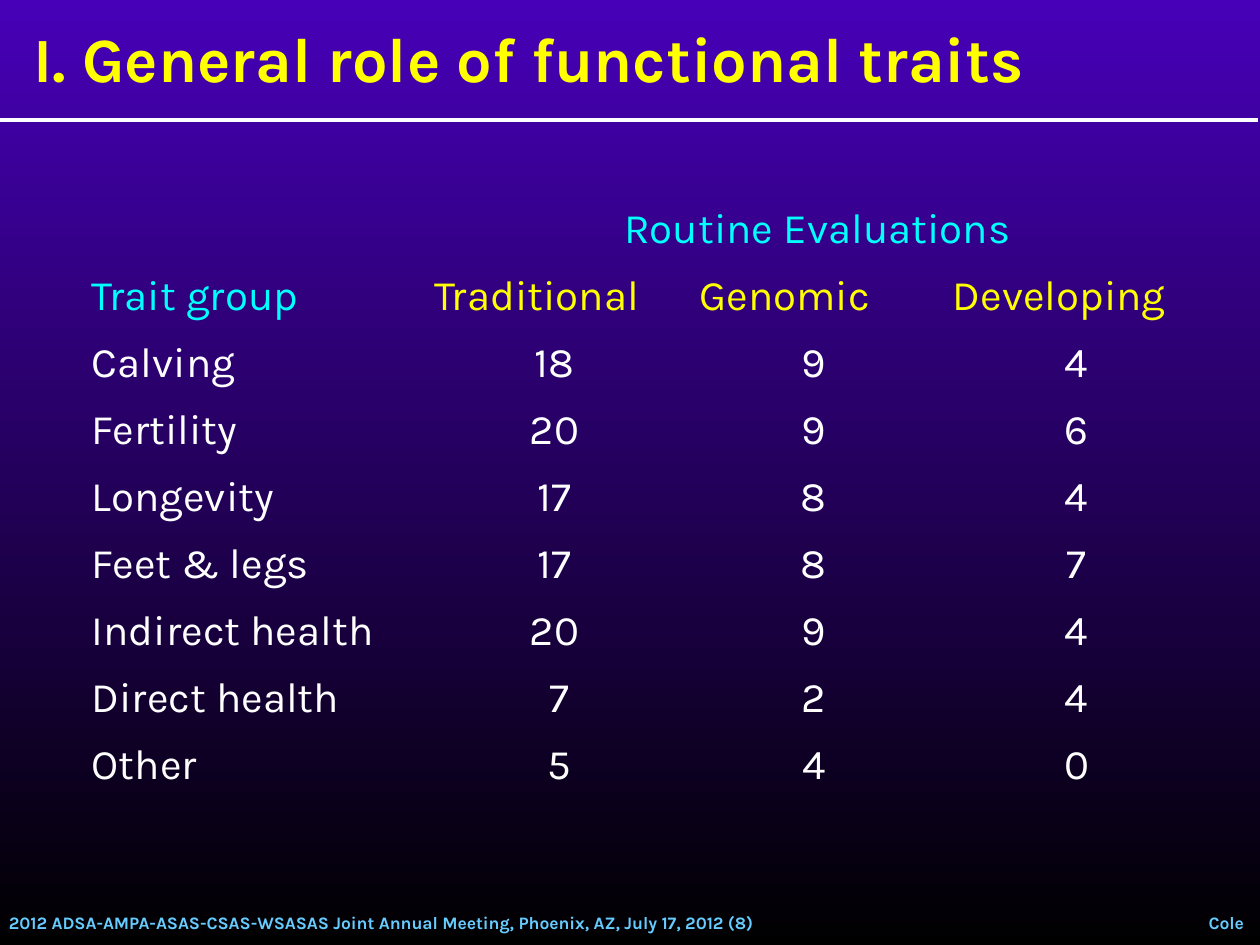
"""Build the slide on the general role of functional traits."""
from pptx import Presentation
from pptx.dml.color import RGBColor
from pptx.enum.shapes import MSO_CONNECTOR
from pptx.enum.text import MSO_ANCHOR, PP_ALIGN as Align
from pptx.oxml.ns import qn
from pptx.util import Cm, Pt
from lxml.etree import SubElement

FONT = "Karla"
VIOLET = RGBColor(0x47, 0x00, 0xB8)
BLACK = RGBColor(0x00, 0x00, 0x00)
WHITE = RGBColor(0xFF, 0xFF, 0xFF)
YELLOW = RGBColor(0xFF, 0xFF, 0x00)
CYAN = RGBColor(0x00, 0xFF, 0xFF)
SKY = RGBColor(0x66, 0xCC, 0xFF)

NO_GRID_STYLE = "{2D5ABB26-0587-4C30-8999-92F81FD0307C}"
COLUMN_WIDTHS = (6.9, 5.35, 5.11, 5.49)
ROW_HEIGHT = 1.35
HEADINGS = ("Trait group", "Traditional", "Genomic", "Developing")
TRAITS = (
    ("Calving", "18", "9", "4"),
    ("Fertility", "20", "9", "6"),
    ("Longevity", "17", "8", "4"),
    ("Feet & legs", "17", "8", "7"),
    ("Indirect health", "20", "9", "4"),
    ("Direct health", " 7", "2", "4"),
    ("Other", " 5", "4", "0"),
)


def set_values(target, values):
    for name, value in values.items():
        setattr(target, name, value)


def write_text(frame, text, size, color, bold=False, align=Align.LEFT):
    para = frame.paragraphs[0]
    para.alignment = align
    span = para.add_run()
    span.text = text
    set_values(span.font, {"name": FONT, "size": Pt(size), "bold": bold})
    span.font.color.rgb = color
    return para


def set_frame(frame, side, edge, wrap=True):
    set_values(frame, {
        "margin_left": Cm(side), "margin_right": Cm(side),
        "margin_top": Cm(edge), "margin_bottom": Cm(edge),
        "word_wrap": wrap, "vertical_anchor": MSO_ANCHOR.MIDDLE,
    })


def add_title(page, bounds, text):
    box = page.shapes.add_textbox(*map(Cm, bounds))
    set_frame(box.text_frame, 0.25, 0.13)
    write_text(box.text_frame, text, 36, YELLOW, bold=True)


def add_footer(page, bounds, text, wrap=True, align=Align.LEFT):
    left, top, width, height = map(Cm, bounds)
    right, bottom = left + width, top + height
    builder = page.shapes.build_freeform(left, top)
    builder.add_line_segments([(right, top), (right, bottom), (left, bottom)])
    shape = builder.convert_to_shape()
    shape.shadow.inherit = False
    shape.fill.background()
    shape.line.fill.background()
    set_frame(shape.text_frame, 0, 0, wrap)
    para = write_text(shape.text_frame, text, 10, SKY, bold=True, align=align)
    para.space_before = Pt(6.2)


def add_rule(page, left, right, top):
    rule = page.shapes.add_connector(
        MSO_CONNECTOR.STRAIGHT, Cm(left), Cm(top), Cm(right), Cm(top))
    rule.line.color.rgb = WHITE
    rule.line.width = Pt(2.15)
    SubElement(rule._element.spPr, qn("a:effectLst"))


def fill_cell(cell, text, color, align=Align.LEFT):
    set_values(cell, {
        "margin_left": Cm(0.25), "margin_right": Cm(0.25),
        "margin_top": Cm(0.15), "margin_bottom": Cm(0.13),
    })
    para = write_text(cell.text_frame, text, 24, color, align=align)
    para.line_spacing = 0.97


def add_trait_table(page, left, top):
    row_count = len(TRAITS) + 2
    frame = page.shapes.add_table(
        row_count, len(COLUMN_WIDTHS), Cm(left), Cm(top),
        Cm(sum(COLUMN_WIDTHS)), Cm(ROW_HEIGHT * row_count))
    table = frame.table
    set_values(table, {"first_row": False, "horz_banding": False})
    table._tbl.tblPr.find(qn("a:tableStyleId")).text = NO_GRID_STYLE
    for column, width in zip(table.columns, COLUMN_WIDTHS):
        column.width = Cm(width)
    for row in table.rows:
        row.height = Cm(ROW_HEIGHT)
    for cell in table.iter_cells():
        cell.fill.background()

    table.cell(0, 1).merge(table.cell(0, 3))
    fill_cell(table.cell(0, 1), "Routine Evaluations", CYAN, Align.CENTER)
    for index, heading in enumerate(HEADINGS):
        fill_cell(table.cell(1, index), heading, YELLOW if index else CYAN)
    for row_index, trait in enumerate(TRAITS, start=2):
        for index, text in enumerate(trait):
            align = Align.CENTER if index else Align.LEFT
            fill_cell(table.cell(row_index, index), text, WHITE, align)


def paint_background(page):
    fill = page.background.fill
    fill.gradient()
    fill.gradient_angle = 270
    for stop, color in zip(fill.gradient_stops, (VIOLET, BLACK)):
        stop.color.rgb = color


def main():
    deck = Presentation()
    set_values(deck, {"slide_width": Cm(25.4), "slide_height": Cm(19.05)})
    page = deck.slides.add_slide(deck.slide_layouts[6])
    paint_background(page)
    add_footer(page, (0.18, 18.39, 20.55, 0.43),
               "2012 ADSA-AMPA-ASAS-CSAS-WSASAS Joint Annual Meeting, "
               "Phoenix, AZ, July 17, 2012 (8)")
    add_footer(page, (24.35, 18.38, 0.74, 0.43), "Cole",
               wrap=False, align=Align.CENTER)
    add_rule(page, -0.05, 25.35, 2.42)
    add_title(page, (0.43, 0.27, 24.54, 1.78),
              "I. General role of functional traits")
    add_trait_table(page, 1.6, 4)
    deck.save("out.pptx")


if __name__ == "__main__":
    main()
